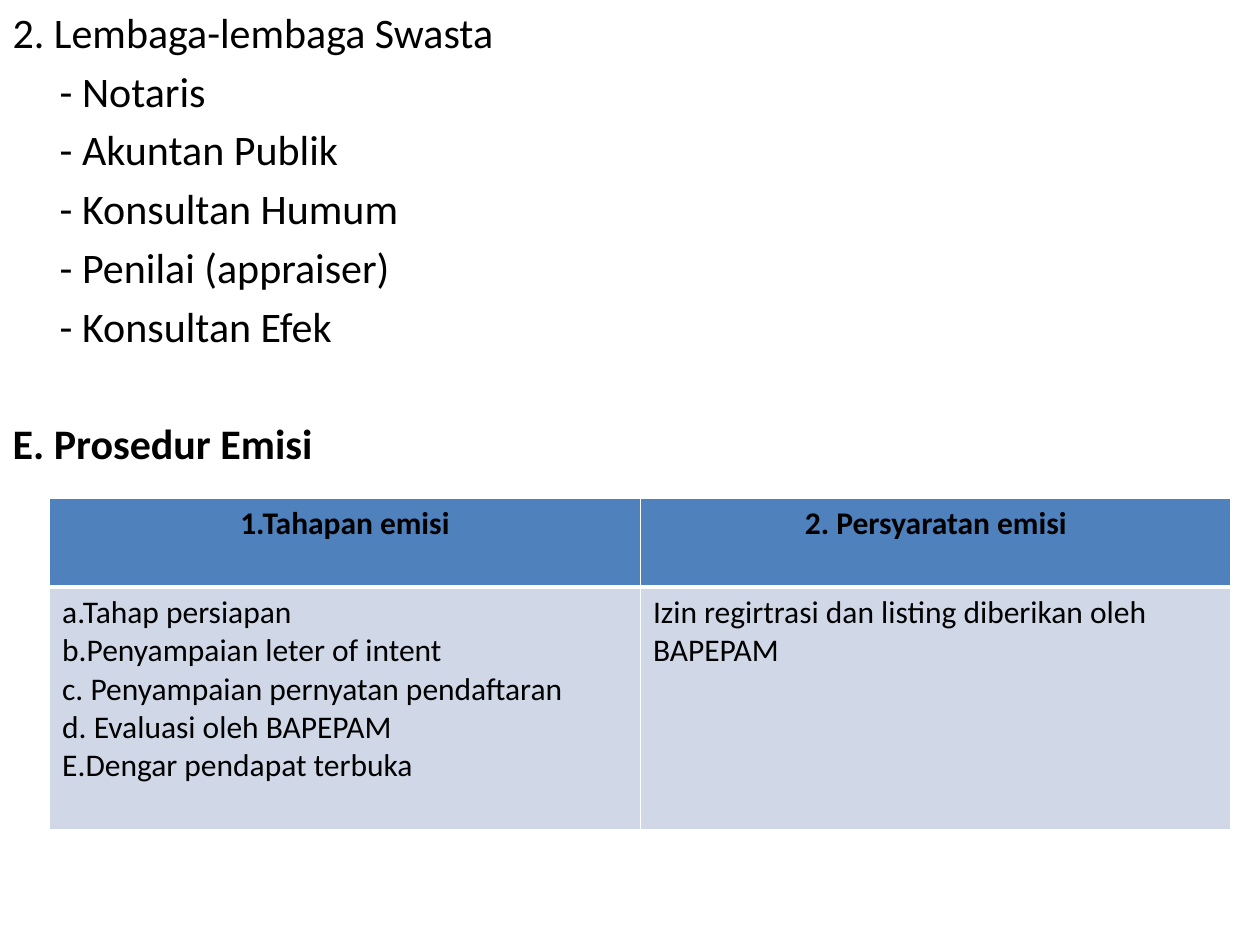
import pptx
import pptx.dml.color
import pptx.enum.text
import pptx.oxml
import pptx.oxml.ns
import pptx.util
from pptx.util import Cm, Pt

FONT = "Calibri"
BLACK, WHITE = "000000", "FFFFFF"
HEADER_FILL, BODY_FILL = "4F81BD", "D0D8E8"
INDENT = Cm(0.95)

HEADING = "2. Lembaga-lembaga Swasta"
INSTITUTIONS = [
    "- Notaris",
    "- Akuntan Publik",
    "- Konsultan Humum",
    "- Penilai (appraiser)",
    "- Konsultan Efek",
]
SECTION = "E. Prosedur Emisi"
TABLE_ROWS = [
    [["1.Tahapan emisi"], ["2. Persyaratan emisi"]],
    [
        [
            "a.Tahap persiapan",
            "b.Penyampaian leter of intent",
            "c. Penyampaian pernyatan pendaftaran",
            "d. Evaluasi oleh BAPEPAM",
            "E.Dengar pendapat terbuka",
        ],
        ["Izin regirtrasi dan listing diberikan oleh BAPEPAM"],
    ],
]


def color(hex_text):
    return pptx.dml.color.RGBColor.from_string(hex_text)


def set_attributes(target, values):
    for name, value in values.items():
        setattr(target, name, value)


def write_run(paragraph, text, size, bold=False):
    run = paragraph.add_run()
    run.text = text
    set_attributes(run.font, {"name": FONT, "size": Pt(size), "bold": bold})
    run.font.color.rgb = color(BLACK)


def next_paragraph(text_frame, index):
    return text_frame.add_paragraph() if index else text_frame.paragraphs[0]


def format_list_paragraph(paragraph, first_line):
    """Remove the bullet and set the left margin and first-line indent."""
    properties = paragraph._p.get_or_add_pPr()
    properties.set("marL", str(INDENT))
    properties.set("indent", str(first_line))
    properties.append(pptx.oxml.parse_xml(
        f'<a:buNone {pptx.oxml.ns.nsdecls("a")}/>'))


def fill_body(shape):
    set_attributes(shape, {"left": 0, "top": 0,
                           "width": Cm(25.4), "height": Cm(19.05)})
    text_frame = shape.text_frame
    set_attributes(text_frame, {
        "word_wrap": True,
        "auto_size": pptx.enum.text.MSO_AUTO_SIZE.NONE,
        "vertical_anchor": pptx.enum.text.MSO_ANCHOR.TOP,
    })
    for index, text in enumerate([HEADING, *INSTITUTIONS, SECTION]):
        paragraph = next_paragraph(text_frame, index)
        is_section = text == SECTION
        if is_section:
            paragraph.space_before = Pt(38)
        format_list_paragraph(paragraph, 0 if text in INSTITUTIONS else -INDENT)
        write_run(paragraph, text, 24, is_section)


def set_borders(cell, widths):
    properties = cell._tc.get_or_add_tcPr()
    for side, width in widths.items():
        properties.append(pptx.oxml.parse_xml(
            f'<a:ln{side} {pptx.oxml.ns.nsdecls("a")} w="{Pt(width)}">'
            f'<a:solidFill><a:srgbClr val="{WHITE}"/></a:solidFill></a:ln{side}>'))


def fill_cell(cell, lines, is_header):
    set_borders(cell, {"L": 1, "R": 1, "T": 1 if is_header else 3,
                       "B": 3 if is_header else 1})
    cell.fill.solid()
    cell.fill.fore_color.rgb = color(HEADER_FILL if is_header else BODY_FILL)
    alignment = pptx.enum.text.PP_ALIGN
    for index, line in enumerate(lines):
        paragraph = next_paragraph(cell.text_frame, index)
        paragraph.alignment = alignment.CENTER if is_header else alignment.LEFT
        write_run(paragraph, line, 18, is_header)


def add_emission_table(slide):
    heights = [Cm(1.78), Cm(4.9)]
    table = slide.shapes.add_table(
        len(TABLE_ROWS), len(TABLE_ROWS[0]),
        Cm(1), Cm(10.05), Cm(23.82), sum(heights)).table
    for row_index, (height, row) in enumerate(zip(heights, TABLE_ROWS)):
        table.rows[row_index].height = height
        for column_index, lines in enumerate(row):
            fill_cell(table.cell(row_index, column_index), lines, row_index == 0)


def main():
    presentation = pptx.Presentation()
    set_attributes(presentation, {"slide_width": Cm(25.4),
                                  "slide_height": Cm(19.05)})
    slide = presentation.slides.add_slide(presentation.slide_layouts[1])

    # The slide has no title
    title = slide.shapes.title._element
    title.getparent().remove(title)

    # List of institutions and section heading
    fill_body(slide.placeholders[1])

    # Stages and requirements
    add_emission_table(slide)

    presentation.save("out.pptx")


if __name__ == "__main__":
    main()
